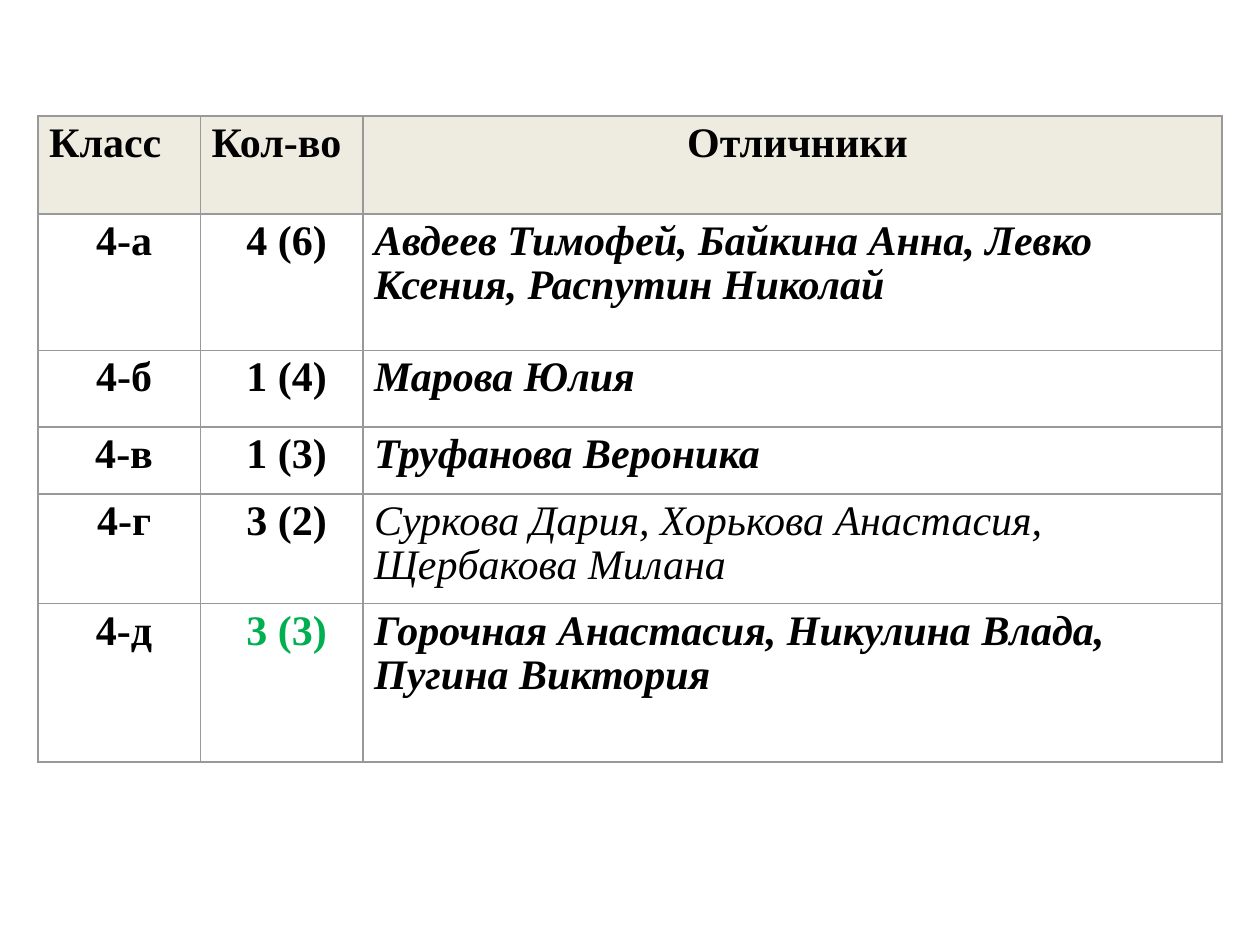
from lxml import etree
from pptx import Presentation
from pptx.dml.color import RGBColor
from pptx.enum.text import PP_ALIGN
from pptx.oxml.ns import qn
from pptx.util import Inches, Pt

LEFT, CENTER = PP_ALIGN.LEFT, PP_ALIGN.CENTER
COLORS = {"header": "EEECE1", "body": "FFFFFF", "text": "000000",
          "green": "00B050", "border": "999999"}
COLUMN_WIDTHS = [1.29, 1.29, 6.82]
ROW_HEIGHTS = [0.78, 1.08, 0.61, 0.53, 0.87, 1.26]
MARGINS = {"margin_left": 0.09, "margin_top": 0.05,
           "margin_right": 0.01, "margin_bottom": 0.05}
ROWS = [
    ["Класс", "Кол-во", "Отличники"],
    ["4-а", "4 (6)", "Авдеев Тимофей, Байкина Анна, Левко Ксения, Распутин Николай"],
    ["4-б", "1 (4)", "Марова Юлия"],
    ["4-в", "1 (3)", "Труфанова Вероника"],
    ["4-г", "3 (2)", "Суркова Дария, Хорькова Анастасия, Щербакова Милана"],
    ["4-д", "3 (3)", "Горочная Анастасия, Никулина Влада, Пугина Виктория"],
]
NAMES_COLUMN = 2
REGULAR_CELL = (4, 2)
GREEN_CELL = (5, 1)


def add_borders(cell):
    properties = cell._tc.get_or_add_tcPr()
    for position, side in enumerate(["a:lnL", "a:lnR", "a:lnT", "a:lnB"]):
        line = etree.Element(qn(side), w=str(Pt(0.96)))
        fill = etree.SubElement(line, qn("a:solidFill"))
        etree.SubElement(fill, qn("a:srgbClr"), val=COLORS["border"])
        properties.insert(position, line)


# Slide
presentation = Presentation()
presentation.slide_width = Inches(10)
presentation.slide_height = Inches(7.5)
slide = presentation.slides.add_slide(presentation.slide_layouts[6])

# Table grid
shape = slide.shapes.add_table(
    len(ROWS), len(COLUMN_WIDTHS), Inches(0.3), Inches(0.92),
    Inches(sum(COLUMN_WIDTHS)), Inches(sum(ROW_HEIGHTS)))
table = shape.table
table.horz_banding = False
for column, width in zip(table.columns, COLUMN_WIDTHS):
    column.width = Inches(width)
for row, height in zip(table.rows, ROW_HEIGHTS):
    row.height = Inches(height)

# Cells
for row_index, texts in enumerate(ROWS):
    is_header = row_index == 0
    for column_index, text in enumerate(texts):
        cell = table.cell(row_index, column_index)
        is_names = column_index == NAMES_COLUMN
        position = (row_index, column_index)

        for name, value in MARGINS.items():
            setattr(cell, name, Inches(value))
        cell.fill.solid()
        cell.fill.fore_color.rgb = RGBColor.from_string(
            COLORS["header" if is_header else "body"])
        add_borders(cell)

        # The names head is centred over left-aligned names; the rest is reversed
        paragraph = cell.text_frame.paragraphs[0]
        paragraph.alignment = CENTER if is_header == is_names else LEFT
        paragraph.line_spacing = 0.95
        run = paragraph.add_run()
        run.text = text
        font_format = {"name": "Times New Roman", "size": Pt(24),
                       "bold": position != REGULAR_CELL,
                       "italic": is_names and not is_header}
        for name, value in font_format.items():
            setattr(run.font, name, value)
        run.font.color.rgb = RGBColor.from_string(
            COLORS["green" if position == GREEN_CELL else "text"])

presentation.save("out.pptx")
